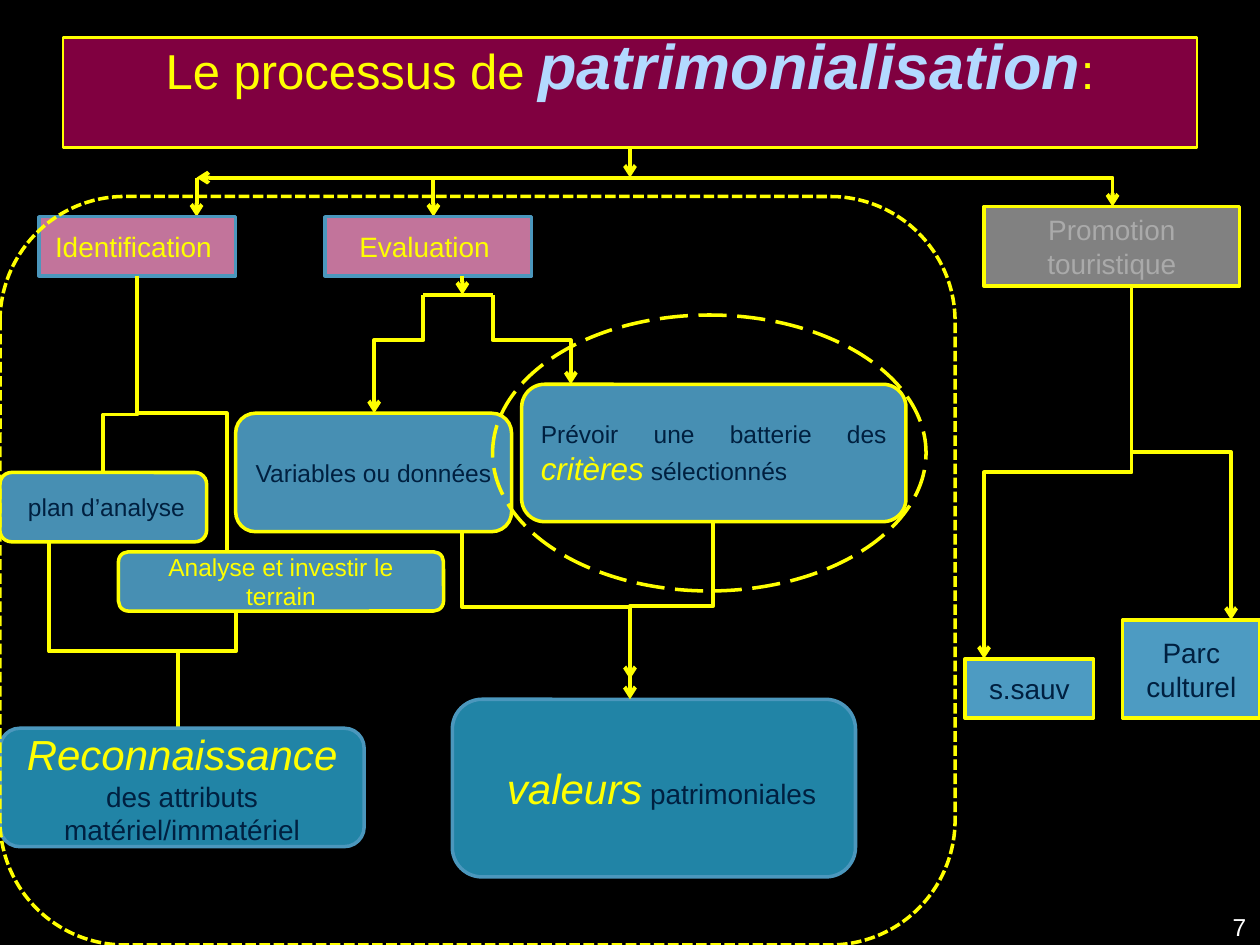
from dataclasses import dataclass

from pptx import Presentation
from pptx.dml.color import RGBColor
from pptx.enum.dml import MSO_LINE
from pptx.enum.shapes import MSO_CONNECTOR, MSO_SHAPE
from pptx.enum.text import MSO_ANCHOR, MSO_AUTO_SIZE, PP_ALIGN
from pptx.oxml.ns import qn
from pptx.util import Inches, Pt
from lxml.etree import SubElement


@dataclass(frozen=True)
class Theme:
    font: str = "Arial"
    back: str = "000000"
    wine: str = "800040"
    yellow: str = "FFFF00"
    pale: str = "B3D9FF"
    navy: str = "002040"
    edge: str = "4B97BD"
    grey: str = "AAAAAA"
    white: str = "FFFFFF"
    pink: tuple = ("FF99CC", 76)
    dim: tuple = ("AAAAAA", 76)
    sky: tuple = ("66CCFF", 76)
    soft: tuple = ("66CCFF", 70)
    deep: tuple = ("33CCFF", 65)
    head: int = 28
    hero: int = 36
    big: int = 24
    mid: int = 18
    body: int = 16
    small: int = 14
    rim: float = 2
    wire: float = 2.25


T = Theme()
RECT, ROUND = MSO_SHAPE.RECTANGLE, MSO_SHAPE.ROUNDED_RECTANGLE


def rgb(code):
    return RGBColor.from_string(code)


def write(frame, runs, align=PP_ALIGN.CENTER):
    """Add runs given as (text, size, colour[, style]); style holds b and i."""
    para = frame.paragraphs[0]
    para.alignment = align
    for text, size, color, *style in runs:
        run = para.add_run()
        run.text = text
        font = run.font
        font.name, font.size = T.font, Pt(size)
        font.color.rgb = rgb(color)
        font.bold = "b" in style
        font.italic = "i" in style


class Area:
    """A region whose parts are placed from its top left corner."""

    def __init__(self, slide, left, top):
        self.shapes, self.left, self.top = slide.shapes, left, top

    def at(self, x, y):
        return Inches(self.left + x), Inches(self.top + y)

    def box(self, x, y, w, h, fill=None, runs=(), kind=RECT, edge=T.yellow,
            dash=None, align=PP_ALIGN.CENTER, pad=(0.1, 0.1)):
        shape = self.shapes.add_shape(kind, *self.at(x, y), Inches(w), Inches(h))
        shape.shadow.inherit = False
        shape.line.color.rgb = rgb(edge)
        shape.line.width = Pt(T.rim)
        if dash:
            shape.line.dash_style = dash
        if fill:
            color, alpha = fill
            shape.fill.solid()
            shape.fill.fore_color.rgb = rgb(color)
            tone = shape._element.spPr.find(qn("a:solidFill"))[0]
            SubElement(tone, qn("a:alpha")).set("val", str(alpha * 1000))
        else:
            shape.fill.background()
        frame = shape.text_frame
        frame.word_wrap = True
        frame.vertical_anchor = MSO_ANCHOR.MIDDLE
        frame.margin_left, frame.margin_right = map(Inches, pad)
        write(frame, runs, align)
        return shape

    def wire(self, start, end, arrow=True, kind=MSO_CONNECTOR.STRAIGHT):
        link = self.shapes.add_connector(kind, *self.at(*start), *self.at(*end))
        link.line.color.rgb = rgb(T.yellow)
        link.line.width = Pt(T.wire)
        if arrow:
            SubElement(link.line._get_or_add_ln(), qn("a:tailEnd")).set("type", "arrow")
        SubElement(link._element.spPr, qn("a:effectLst"))
        return link

    def drop(self, start, end, bend, arrow=True):
        """Go down to the height bend, across, then down to the end."""
        (x1, y1), (x2, y2) = start, end
        wide, tall = abs(x2 - x1), y2 - y1
        x, y = (x1 + x2 - tall) / 2, (y1 + y2 - wide) / 2
        link = self.wire((x, y), (x + tall, y + wide), arrow, MSO_CONNECTOR.ELBOW)
        props = link._element.spPr
        turn = props.find(qn("a:xfrm"))
        turn.set("rot", str((90 if x2 < x1 else 270) * 60000))
        if x2 > x1:
            turn.set("flipH", "1")
        geom = props.find(qn("a:prstGeom"))
        guides = geom.find(qn("a:avLst"))
        if guides is None:
            guides = SubElement(geom, qn("a:avLst"))
        guide = SubElement(guides, qn("a:gd"))
        guide.set("name", "adj1")
        guide.set("fmla", f"val {round((bend - y1) / tall * 100000)}")


def header(slide, left, top):
    area = Area(slide, left, top)
    title = slide.shapes.title
    title.left, title.top = area.at(0, 0)
    title.width, title.height = Inches(9), Inches(0.87)
    title.fill.solid()
    title.fill.fore_color.rgb = rgb(T.wine)
    title.line.color.rgb = rgb(T.yellow)
    title.line.width = Pt(1.5)
    frame = title.text_frame
    frame.word_wrap, frame.auto_size = True, MSO_AUTO_SIZE.NONE
    frame.vertical_anchor = MSO_ANCHOR.MIDDLE
    frame.margin_top, frame.margin_bottom = 0, Inches(0.45)
    write(frame, [("Le processus de ", T.head, T.yellow),
                  ("patrimonialisation", T.hero, T.pale, "b", "i"),
                  (":", T.head, T.yellow)])
    area.wire((4.5, 0.87), (4.5, 1.11)).begin_connect(title, 2)
    area.wire((4.66, 1.11), (1.06, 1.11))
    right = area.wire((4.5, 1.11), (8.33, 1.34), kind=MSO_CONNECTOR.ELBOW)
    right._element.spPr.find(qn("a:prstGeom")).set("prst", "bentConnector2")
    for x in (1.06, 2.94):
        area.wire((x, 1.11), (x, 1.42))


def identify(slide, left, top):
    area = Area(slide, left, top)
    area.box(0.31, 0, 1.56, 0.47, T.pink, [("Identification", T.body, T.yellow)],
             edge=T.edge, pad=(0.1, 0.16))
    area.drop((1.09, 0.47), (1.8, 2.66), 1.56, False)
    area.drop((1.09, 0.47), (0.82, 2.03), 1.57, False)
    area.box(0, 2.03, 1.64, 0.55, T.soft, [("plan d’analyse", T.small, T.navy)],
             ROUND, pad=(0.15, 0.1))
    area.box(0.94, 2.66, 2.58, 0.47, T.soft,
             [("Analyse et investir le terrain", T.small, T.yellow)], ROUND)
    area.drop((0.39, 2.58), (1.41, 4.06), 3.45, False)
    area.drop((1.87, 3.12), (1.41, 3.59), 3.45, False)
    area.box(0, 4.06, 2.89, 0.94, T.deep,
             [("Reconnaissance", T.big, T.yellow, "i"),
              (" des attributs matériel/immatériel", T.body, T.navy)],
             ROUND, T.edge)


def evaluate(slide, left, top):
    area = Area(slide, left, top)
    area.box(0.71, 0, 1.64, 0.47, T.pink, [("Evaluation", T.body, T.yellow)],
             edge=T.edge, pad=(0.1, 0.16))
    area.wire((1.8, 0.47), (1.8, 0.62))
    area.wire((2.04, 0.62), (1.49, 0.62), False)
    area.box(0, 1.56, 2.19, 0.94, T.soft,
             [("Variables ou données", T.small, T.navy)], ROUND)
    area.box(2.27, 1.33, 3.05, 1.09, T.soft,
             [("Prévoir une batterie des ", T.small, T.navy),
              ("critères", T.mid, T.yellow, "i"),
              (" sélectionnés", T.small, T.navy)],
             ROUND, align=PP_ALIGN.JUSTIFY)
    area.box(1.72, 3.83, 3.2, 1.41, T.deep,
             [("valeurs", T.big, T.yellow, "i"),
              (" patrimoniales", T.body, T.navy)],
             ROUND, T.edge, pad=(0.22, 0.1))
    area.drop((1.49, 0.62), (1.1, 1.56), 0.98)
    area.drop((2.04, 0.62), (2.66, 1.33), 0.98)
    area.drop((3.79, 2.42), (3.13, 3.67), 3.09)
    area.drop((1.8, 2.5), (3.13, 3.83), 3.1)
    area.box(2.04, 0.78, 3.44, 2.19, kind=MSO_SHAPE.OVAL, dash=MSO_LINE.LONG_DASH)


def promote(slide, left, top):
    area = Area(slide, left, top)
    area.box(0.15, 0, 2.03, 0.63, T.dim, [("Promotion touristique", T.body, T.grey)])
    area.drop((1.32, 0.63), (0.15, 3.59), 2.11)
    area.drop((1.32, 0.63), (2.11, 3.28), 1.95)
    area.box(0, 3.59, 1.02, 0.47, T.sky, [("s.sauv", T.body, T.navy)])
    area.box(1.25, 3.28, 1.09, 0.78, T.sky, [("Parc culturel", T.body, T.navy)])


def number(slide, left, top):
    note = slide.shapes.add_textbox(Inches(left), Inches(top), Inches(2.33), Inches(0.52))
    note.text_frame.word_wrap = True
    write(note.text_frame, [("7", T.small, T.white)], PP_ALIGN.RIGHT)


def main():
    deck = Presentation()
    deck.slide_width, deck.slide_height = Inches(10), Inches(7.5)
    slide = deck.slides.add_slide(deck.slide_layouts[5])
    slide.background.fill.solid()
    slide.background.fill.fore_color.rgb = rgb(T.back)
    header(slide, 0.5, 0.3)
    identify(slide, 0, 1.72)
    evaluate(slide, 1.87, 1.72)
    Area(slide, 0, 1.56).box(0, 0, 7.58, 5.94, kind=ROUND, dash=MSO_LINE.SQUARE_DOT)
    promote(slide, 7.66, 1.64)
    number(slide, 7.66, 7.19)
    deck.save("out.pptx")


if __name__ == "__main__":
    main()
